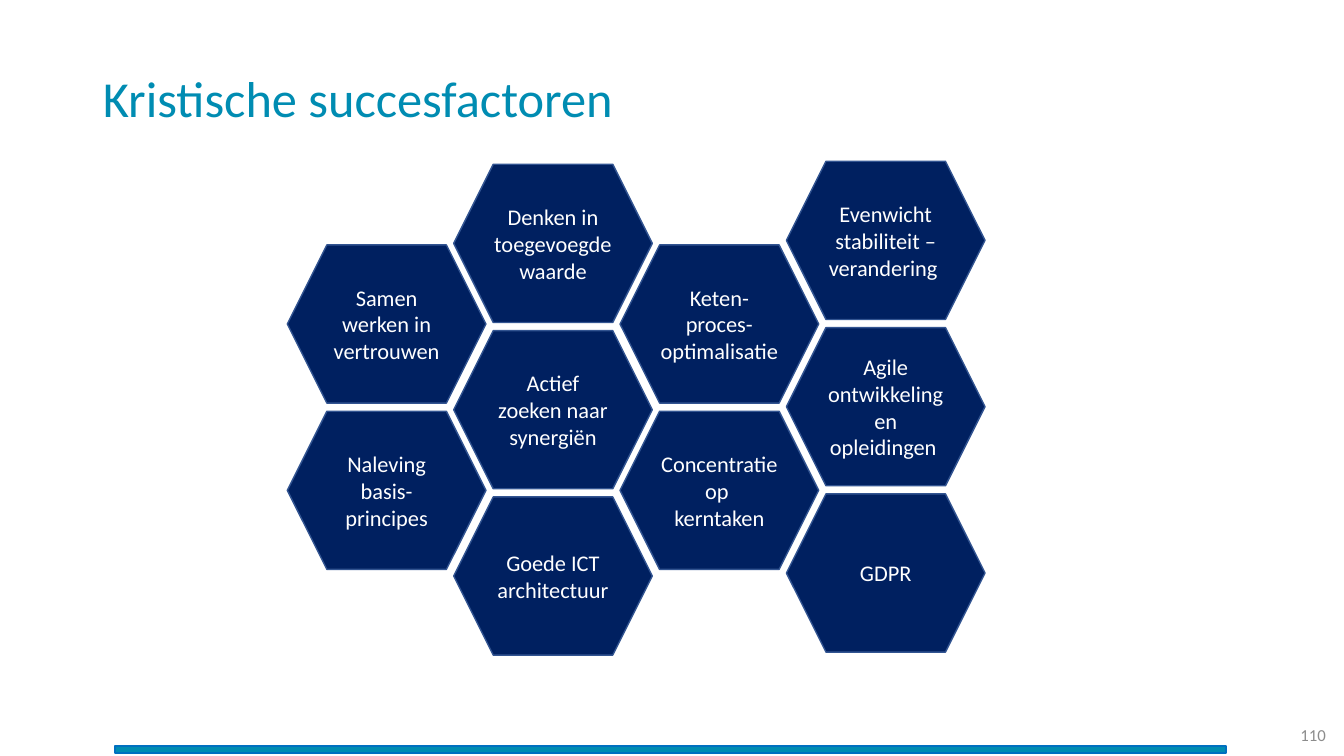
from dataclasses import dataclass

from pptx import Presentation
from pptx.dml.color import RGBColor
from pptx.enum.shapes import MSO_SHAPE as Preset
from pptx.enum.text import MSO_ANCHOR as Anchor, MSO_AUTO_SIZE as AutoSize, PP_ALIGN as Align
from pptx.shapes.autoshape import Shape
from pptx.slide import Slide
from pptx.util import Inches, Pt

TEAL = RGBColor(0x00, 0x8C, 0xB2)
BLUE = RGBColor(0x00, 0x70, 0xC0)
NAVY = RGBColor(0x00, 0x20, 0x60)
EDGE = RGBColor(0x32, 0x54, 0x91)
GREY = RGBColor(0x8C, 0x8C, 0x8C)
WHITE = RGBColor(0xFF, 0xFF, 0xFF)

FIRST_LEFT = 2.85
PITCH = 1.65
HEX_WIDTH, HEX_HEIGHT = 1.97, 1.57


@dataclass(frozen=True)
class FactorColumn:
    top: float
    factors: tuple[str, ...]


@dataclass(frozen=True)
class TextStyle:
    size: float
    color: RGBColor
    align: Align
    line_spacing: float = 1.0


TITLE_STYLE = TextStyle(36, TEAL, Align.LEFT, 0.9)
FACTOR_STYLE = TextStyle(16, WHITE, Align.CENTER)
NUMBER_STYLE = TextStyle(12, GREY, Align.RIGHT)

COLUMNS = (
    FactorColumn(2.43, ("Samen werken in vertrouwen", "Naleving basis- principes")),
    FactorColumn(1.63, (
        "Denken in toegevoegde waarde",
        "Actief zoeken naar synergiën",
        "Goede ICT architectuur",
    )),
    FactorColumn(2.43, ("Keten-\nproces-\noptimalisatie ", "Concentratie op \nkerntaken")),
    FactorColumn(1.6, (
        "Evenwicht stabiliteit – verandering ",
        "Agile ontwikkeling en opleidingen ",
        "GDPR",
    )),
)


def write_text(holder: Shape, text: str, style: TextStyle) -> None:
    frame = holder.text_frame
    frame.text = text
    frame_format = {
        "word_wrap": True,
        "auto_size": AutoSize.NONE,
        "vertical_anchor": Anchor.MIDDLE,
    }
    for attribute, value in frame_format.items():
        setattr(frame, attribute, value)
    font_format = {"name": "Calibri", "size": Pt(style.size), "bold": False}
    for paragraph in frame.paragraphs:
        paragraph.alignment = style.align
        paragraph.line_spacing = style.line_spacing
        for run in paragraph.runs:
            for attribute, value in font_format.items():
                setattr(run.font, attribute, value)
            run.font.color.rgb = style.color


def draw_shape(slide: Slide, preset: Preset, left: float, top: float, width: float,
               height: float, fill: RGBColor, edge: RGBColor) -> Shape:
    shape = slide.shapes.add_shape(
        preset, Inches(left), Inches(top), Inches(width), Inches(height))
    shape.shadow.inherit = False
    shape.fill.solid()
    shape.fill.fore_color.rgb = fill
    shape.line.color.rgb = edge
    shape.line.width = Pt(1)
    return shape


def draw_title(slide: Slide, text: str) -> None:
    title = slide.shapes.title
    place = {"left": 0.92, "top": 0.28, "width": 11.5, "height": 1.45}
    for attribute, value in place.items():
        setattr(title, attribute, Inches(value))
    write_text(title, text, TITLE_STYLE)


def draw_footer(slide: Slide, number: str) -> None:
    draw_shape(slide, Preset.RECTANGLE, 1.14, 7.4, 11.02, 0.07, TEAL, BLUE)
    page_number = slide.shapes.add_textbox(
        Inches(12.43), Inches(7.09), Inches(0.82), Inches(0.4))
    write_text(page_number, number, NUMBER_STYLE)


def draw_factors(slide: Slide) -> None:
    for column_index, column in enumerate(COLUMNS):
        left = FIRST_LEFT + column_index * PITCH
        for row_index, factor in enumerate(column.factors):
            top = column.top + row_index * PITCH
            hexagon = draw_shape(slide, Preset.HEXAGON, left, top,
                                 HEX_WIDTH, HEX_HEIGHT, NAVY, EDGE)
            write_text(hexagon, factor, FACTOR_STYLE)


def main() -> None:
    deck = Presentation()
    deck.slide_width, deck.slide_height = Inches(13.33), Inches(7.5)
    slide = deck.slides.add_slide(deck.slide_layouts.get_by_name("Title Only"))
    draw_footer(slide, "110")
    draw_title(slide, "Kristische succesfactoren")
    draw_factors(slide)
    deck.save("out.pptx")


if __name__ == "__main__":
    main()
